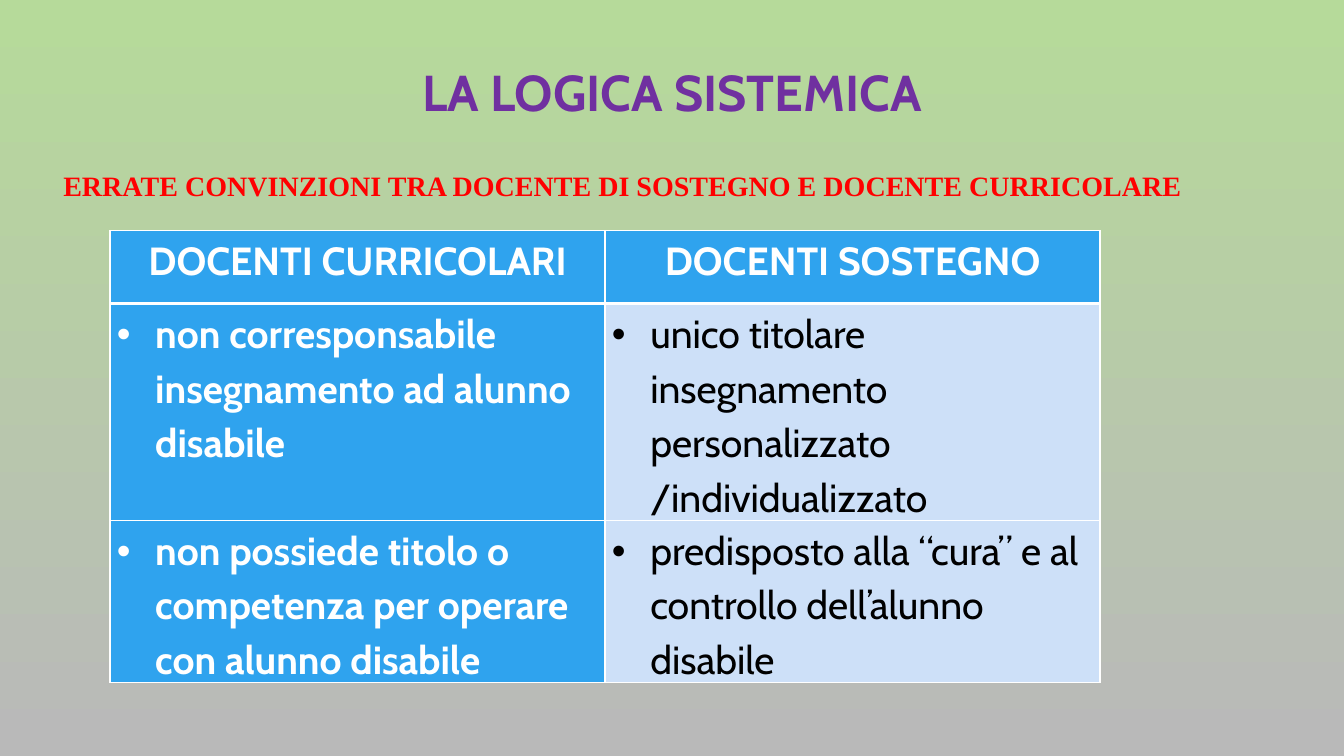
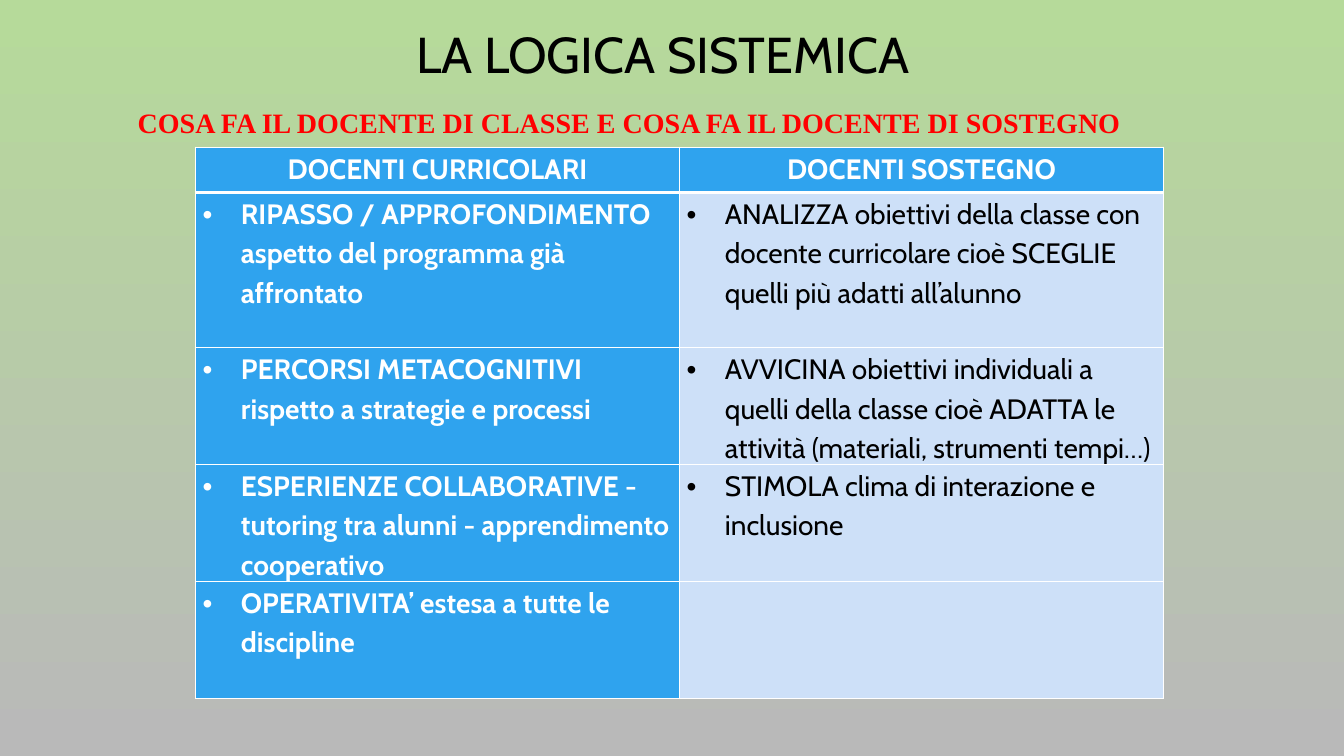
from dataclasses import dataclass

from lxml.etree import SubElement
from pptx import Presentation
from pptx.dml.color import RGBColor
from pptx.enum.text import MSO_ANCHOR, MSO_AUTO_SIZE, PP_ALIGN
from pptx.oxml.ns import qn
from pptx.util import Inches, Pt

GREEN, GREY = "B6DA9A", "B9B9B9"
PURPLE, RED = "7030A0", "FF0000"
BLUE, PALE_BLUE = "2FA3EE", "CDE0F8"
WHITE, BLACK = "FFFFFF", "000000"
BODY_FONT, SUBTITLE_FONT = "Cabin", "Times New Roman"
TITLE = "LA LOGICA SISTEMICA"
HEADER = ("DOCENTI CURRICOLARI", "DOCENTI SOSTEGNO")


@dataclass(frozen=True)
class Box:
    """Position and size in inches."""

    left: float
    top: float
    width: float
    height: float


@dataclass(frozen=True)
class TextStyle:
    """Font settings of a paragraph."""

    font: str
    size: float
    colour: str
    bold: bool


@dataclass(frozen=True)
class Comparison:
    """One slide that compares the two kinds of teacher."""

    title_box: Box
    title_style: TextStyle
    subtitle: str
    subtitle_box: Box
    table_left: float
    table_top: float
    column_width: float
    row_heights: tuple[float, ...]
    text_size: float
    rows: tuple[tuple[str, str], ...]


COMPARISONS = (
    Comparison(
        title_box=Box(1, 0.47, 11.33, 0.94),
        title_style=TextStyle(BODY_FONT, 36, PURPLE, True),
        subtitle="ERRATE CONVINZIONI TRA DOCENTE DI SOSTEGNO E DOCENTE CURRICOLARE",
        subtitle_box=Box(0.51, 1.57, 11.33, 0.46),
        table_left=1.09,
        table_top=2.29,
        column_width=4.91,
        row_heights=(0.72, 2.15, 1.61),
        text_size=28,
        rows=(
            (
                "non corresponsabile insegnamento ad alunno disabile",
                "unico titolare insegnamento personalizzato /individualizzato",
            ),
            (
                "non possiede titolo o competenza per operare con alunno disabile",
                "predisposto alla “cura” e al controllo dell’alunno disabile",
            ),
        ),
    ),
    Comparison(
        title_box=Box(0.91, 0.19, 11.33, 0.76),
        title_style=TextStyle(BODY_FONT, 36, BLACK, False),
        subtitle="COSA FA IL DOCENTE DI CLASSE E COSA FA IL DOCENTE DI SOSTEGNO",
        subtitle_box=Box(1.09, 0.95, 10.3, 0.46),
        table_left=1.94,
        table_top=1.46,
        column_width=4.8,
        row_heights=(0.45, 1.54, 1.16, 1.16, 1.16),
        text_size=20,
        rows=(
            (
                "RIPASSO / APPROFONDIMENTO aspetto del programma già affrontato",
                "ANALIZZA obiettivi della classe con docente curricolare cioè SCEGLIE "
                "quelli più adatti all’alunno",
            ),
            (
                "PERCORSI METACOGNITIVI rispetto a strategie e processi",
                "AVVICINA obiettivi individuali a quelli della classe cioè ADATTA le "
                "attività (materiali, strumenti tempi…)",
            ),
            (
                "ESPERIENZE COLLABORATIVE - tutoring tra alunni - apprendimento cooperativo",
                "STIMOLA clima di interazione e inclusione",
            ),
            ("OPERATIVITA’ estesa a tutte le discipline", ""),
        ),
    ),
)


def rgb(colour: str) -> RGBColor:
    """Turn a hex string into a colour."""
    return RGBColor.from_string(colour)


def paint_background(presentation) -> None:
    """Give every slide the vertical gradient through the master."""
    fill = presentation.slide_master.background.fill
    fill.gradient()
    fill.gradient_angle = 270
    for stop, colour in zip(fill.gradient_stops, (GREEN, GREY)):
        stop.color.rgb = rgb(colour)


def write_paragraph(paragraph, text: str, style: TextStyle, line_spacing: float) -> None:
    """Fill and format one paragraph."""
    paragraph.text = text
    paragraph.line_spacing = line_spacing
    paragraph.font.name = style.font
    paragraph.font.size = Pt(style.size)
    paragraph.font.bold = style.bold
    paragraph.font.color.rgb = rgb(style.colour)


def add_bullet(paragraph) -> None:
    """Give a paragraph a hanging round bullet."""
    properties = paragraph._p.get_or_add_pPr()
    properties.set("marL", str(Inches(0.38)))
    properties.set("indent", str(Inches(-0.38)))
    SubElement(properties, qn("a:buFont"), typeface="Arial")
    SubElement(properties, qn("a:buChar"), char="•")


def add_borders(cell, top: float, bottom: float) -> None:
    """Draw white lines around a cell, with widths in points."""
    properties = cell._tc.get_or_add_tcPr()
    for side, width in (("L", 1), ("R", 1), ("T", top), ("B", bottom)):
        line = SubElement(properties, qn(f"a:ln{side}"), w=str(Pt(width)))
        fill = SubElement(line, qn("a:solidFill"))
        SubElement(fill, qn("a:srgbClr"), val=WHITE)


def place_title(slide, comparison: Comparison) -> None:
    """Move and format the title placeholder."""
    title, box = slide.shapes.title, comparison.title_box
    title.left, title.top = Inches(box.left), Inches(box.top)
    title.width, title.height = Inches(box.width), Inches(box.height)
    frame = title.text_frame
    frame.auto_size = MSO_AUTO_SIZE.NONE
    frame.vertical_anchor = MSO_ANCHOR.MIDDLE
    paragraph = frame.paragraphs[0]
    write_paragraph(paragraph, TITLE, comparison.title_style, 0.9)
    paragraph.alignment = PP_ALIGN.CENTER


def add_subtitle(slide, comparison: Comparison) -> None:
    """Add the red line under the title."""
    box = comparison.subtitle_box
    shape = slide.shapes.add_textbox(
        Inches(box.left), Inches(box.top), Inches(box.width), Inches(box.height)
    )
    frame = shape.text_frame
    frame.word_wrap = True
    frame.auto_size = MSO_AUTO_SIZE.SHAPE_TO_FIT_TEXT
    paragraph = frame.paragraphs[0]
    write_paragraph(paragraph, comparison.subtitle, TextStyle(SUBTITLE_FONT, 20, RED, True), 1.15)
    paragraph.alignment = PP_ALIGN.CENTER
    paragraph.space_after = Pt(10)


def fill_cell(cell, text: str, size: float, row: int, column: int) -> None:
    """Format a table cell by its place and write its text."""
    is_header = row == 0
    is_strong = is_header or column == 0
    add_borders(cell, top=3 if row == 1 else 1, bottom=3 if is_header else 1)
    cell.fill.solid()
    cell.fill.fore_color.rgb = rgb(BLUE if is_strong else PALE_BLUE)
    cell.margin_left = cell.margin_right = Inches(0.07)
    cell.margin_top = cell.margin_bottom = 0
    if not text:
        return
    paragraph = cell.text_frame.paragraphs[0]
    if is_header:
        paragraph.alignment = PP_ALIGN.CENTER
    else:
        add_bullet(paragraph)
    style = TextStyle(BODY_FONT, size, WHITE if is_strong else BLACK, is_strong)
    write_paragraph(paragraph, text, style, 1.15)


def add_comparison_table(slide, comparison: Comparison) -> None:
    """Add the two-column table with its header row."""
    rows = (HEADER, *comparison.rows)
    table = slide.shapes.add_table(
        len(rows),
        len(HEADER),
        Inches(comparison.table_left),
        Inches(comparison.table_top),
        Inches(comparison.column_width * len(HEADER)),
        Inches(sum(comparison.row_heights)),
    ).table
    table.horz_banding = False
    for column in table.columns:
        column.width = Inches(comparison.column_width)
    for row_index, (height, texts) in enumerate(zip(comparison.row_heights, rows)):
        table.rows[row_index].height = Inches(height)
        for column_index, text in enumerate(texts):
            cell = table.cell(row_index, column_index)
            fill_cell(cell, text, comparison.text_size, row_index, column_index)


def main() -> None:
    """Build and save the presentation."""
    presentation = Presentation()
    presentation.slide_width = Inches(13.33)
    presentation.slide_height = Inches(7.5)
    paint_background(presentation)
    for comparison in COMPARISONS:
        slide = presentation.slides.add_slide(presentation.slide_layouts.get_by_name("Title Only"))
        place_title(slide, comparison)
        add_subtitle(slide, comparison)
        add_comparison_table(slide, comparison)
    presentation.save("out.pptx")


if __name__ == "__main__":
    main()
